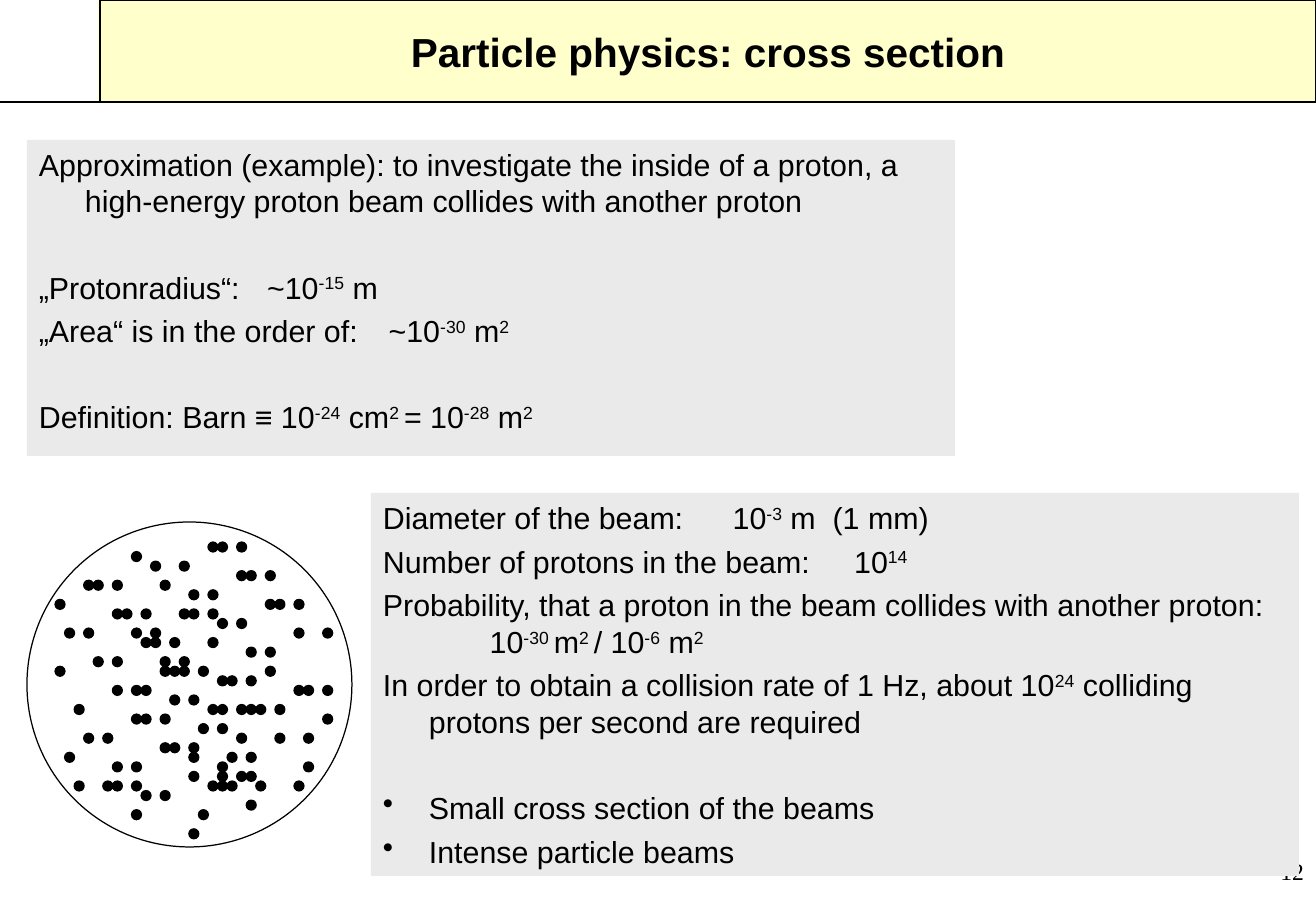
"""Builds the slide on the cross section in particle physics."""
from lxml.etree import SubElement
from pptx import Presentation
from pptx.dml.color import RGBColor
from pptx.enum.shapes import MSO_CONNECTOR, MSO_SHAPE
from pptx.enum.text import MSO_ANCHOR, PP_ALIGN
from pptx.oxml.ns import qn
from pptx.util import Pt

PX = 7526
COLORS = {"ink": "000000", "title": "FFFFCC", "panel": "EAEAEA"}
SLIDE = (1316, 911)
TITLE = "Particle physics: cross section"
TITLE_BOX = (100, 0, 1216, 102)
TITLE_EDGE = (98, 0, 49, 101)
PAGE = "12"
PAGE_BOX = (1042, 851, 274, 60)
INDENT = 46
LINE_GAP, BLOCK_GAP = 4.3, 29.5

# Text between carets is raised; each entry is (text, starts a new block, bulleted).
PANELS = [
    ((27, 140, 928, 316), (365,), [
        ("Approximation (example): to investigate the inside of a proton, "
         "a high-energy proton beam collides with another proton", False, False),
        ("„Protonradius“:\t~10^-15^ m", True, False),
        ("„Area“ is in the order of:\t~10^-30^ m^2^", False, False),
        ("Definition: Barn ≡ 10^-24^ cm^2 ^= 10^-28^ m^2^", True, False),
    ]),
    ((371, 493, 928, 383), (122, 486), [
        ("Diameter of the beam:\t10^-3^ m  (1 mm)", False, False),
        ("Number of protons in the beam:\t10^14^", False, False),
        ("Probability, that a proton in the beam collides with another proton:"
         "\v\t10^-30 ^m^2 ^/ 10^-6^ m^2^", False, False),
        ("In order to obtain a collision rate of 1 Hz, about 10^24^ colliding "
         "protons per second are required", False, False),
        ("Small cross section of the beams", True, True),
        ("Intense particle beams", False, True),
    ]),
]

BEAM = (27, 522, 325, 325)
PROTON_ORIGIN, PROTON_SIZE, PROTON_STEP = (55, 542), 10, 9.56
PROTON_ROWS = [
    (16, 17, 19), (8,), (10, 13), (19, 20, 22), (3, 4, 6, 11), (14, 16),
    (0, 22, 23, 25), (6, 7, 9, 13, 14, 16), (17, 19), (1, 3, 8, 10, 25, 28),
    (9, 10, 12, 16), (20, 22), (4, 6, 11, 13), (0, 11, 12, 13, 15, 22),
    (17, 18, 20), (6, 8, 9, 25, 26, 28), (12, 14),
    (2, 16, 17, 19, 20, 21, 23), (8, 9, 11, 28), (15, 17),
    (3, 5, 19, 23, 26), (11, 12, 14), (1, 14, 18, 20), (6, 8, 17, 26),
    (14, 17, 19, 20), (2, 5, 6, 8, 16, 17, 18, 21, 25), (9, 11), (20,),
    (8, 15), (), (14,),
]


def emu(*lengths):
    return [round(length * PX) for length in lengths]


def color(name):
    return RGBColor.from_string(COLORS[name])


def draw(kind, box, fill=None, outlined=False):
    shape = slide.shapes.add_shape(kind, *emu(*box))
    shape.shadow.inherit = False
    if fill:
        shape.fill.solid()
        shape.fill.fore_color.rgb = color(fill)
    else:
        shape.fill.background()
    if outlined:
        shape.line.color.rgb = color("ink")
        shape.line.width = Pt(0.75)
    else:
        shape.line.fill.background()
    return shape


def style(font, size, name="Arial", bold=False):
    font.size, font.name, font.bold = Pt(size), name, bold
    font.color.rgb = color("ink")


def write_paragraph(paragraph, text, bulleted, tabs):
    paragraph.alignment = PP_ALIGN.LEFT
    props = paragraph._p.get_or_add_pPr()
    indent, = emu(INDENT)
    props.set("marL", str(indent))
    props.set("indent", str(-indent))
    if bulleted:
        SubElement(props, qn("a:buChar"), char="•")
    else:
        SubElement(props, qn("a:buNone"))
    tab_list = SubElement(props, qn("a:tabLst"))
    for stop in emu(*tabs):
        SubElement(tab_list, qn("a:tab"), pos=str(stop), algn="l")
    base, *rest = text.split("^")
    paragraph.text = base
    for position, part in enumerate(rest):
        if part:
            run = paragraph.add_run()
            run.text = part
            if position % 2 == 0:
                run._r.get_or_add_rPr().set("baseline", "30000")
    for run in paragraph.runs:
        style(run.font, 18)


def write_panel(box, tabs, entries):
    frame = draw(MSO_SHAPE.RECTANGLE, box, "panel").text_frame
    frame.word_wrap = True
    frame.vertical_anchor = MSO_ANCHOR.TOP
    for number, (text, new_block, bulleted) in enumerate(entries):
        paragraph = frame.add_paragraph() if number else frame.paragraphs[0]
        if number:
            paragraph.space_before = Pt(BLOCK_GAP if new_block else LINE_GAP)
        write_paragraph(paragraph, text, bulleted, tabs)


deck = Presentation()
deck.slide_width, deck.slide_height = emu(*SLIDE)
slide = deck.slides.add_slide(deck.slide_layouts[6])

draw(MSO_SHAPE.RECTANGLE, TITLE_EDGE, "title")
rule = slide.shapes.add_connector(MSO_CONNECTOR.STRAIGHT, *emu(0, 102, SLIDE[0], 102))
rule.line.color.rgb = color("ink")
rule.line.width = Pt(0.75)
SubElement(rule._element.spPr, qn("a:effectLst"))

page = slide.shapes.add_textbox(*emu(*PAGE_BOX)).text_frame
page.word_wrap = True
page.text = PAGE
page.paragraphs[0].alignment = PP_ALIGN.RIGHT
style(page.paragraphs[0].runs[0].font, 14, "Times New Roman")

title = draw(MSO_SHAPE.RECTANGLE, TITLE_BOX, "title", True).text_frame
title.text = TITLE
title.vertical_anchor = MSO_ANCHOR.MIDDLE
title.paragraphs[0].alignment = PP_ALIGN.CENTER
style(title.paragraphs[0].runs[0].font, 24, bold=True)

draw(MSO_SHAPE.OVAL, BEAM, outlined=True)
left, top = PROTON_ORIGIN
for row, columns in enumerate(PROTON_ROWS):
    for column in columns:
        spot = (left + column * PROTON_STEP, top + row * PROTON_STEP)
        draw(MSO_SHAPE.OVAL, (*spot, PROTON_SIZE, PROTON_SIZE), "ink", True)

for panel in PANELS:
    write_panel(*panel)

deck.save("out.pptx")
